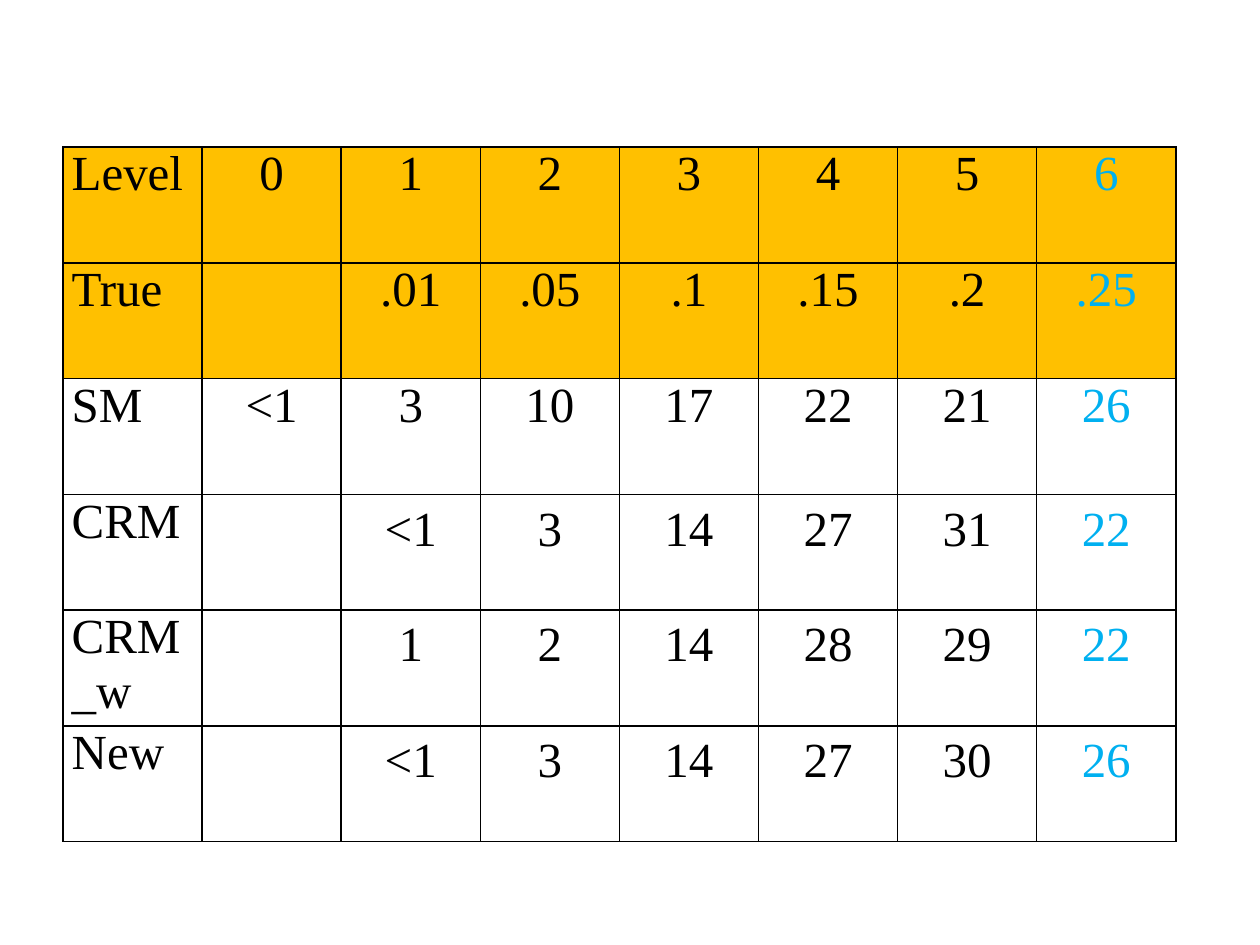
from lxml import etree
from pptx import Presentation
from pptx.dml.color import RGBColor
from pptx.enum.text import PP_ALIGN
from pptx.oxml.ns import qn
from pptx.util import Pt

CENTER, LEFT = PP_ALIGN.CENTER, PP_ALIGN.LEFT
BLANK_LAYOUT = 6
COLORS = {"text": "000000", "border": "000000", "header": "FFC000", "highlight": "00B0F0"}
FONT = "Times New Roman"
HEADER_ROWS = 2
FIRST_LOOSE_ROW = 3
ROWS = [
    ["Level", "0", "1", "2", "3", "4", "5", "6"],
    ["True", "", ".01", ".05", ".1", ".15", ".2", ".25"],
    ["SM", "<1", "3", "10", "17", "22", "21", "26"],
    ["CRM", "", "<1", "3", "14", "27", "31", "22"],
    ["CRM_w", "", "1", "2", "14", "28", "29", "22"],
    ["New", "", "<1", "3", "14", "27", "30", "26"],
]


def add_borders(cell):
    """Draw a one-point line on each side of the cell."""
    properties = cell._tc.get_or_add_tcPr()
    for index, side in enumerate(("a:lnL", "a:lnR", "a:lnT", "a:lnB")):
        line = etree.Element(qn(side), w=str(Pt(1)))
        fill = etree.SubElement(line, qn("a:solidFill"))
        etree.SubElement(fill, qn("a:srgbClr"), val=COLORS["border"])
        properties.insert(index, line)


def format_cell(cell, text, row, column):
    """Fill one cell and style it by its place in the table."""
    cell.margin_left = cell.margin_right = Pt(5)
    cell.margin_top = cell.margin_bottom = Pt(0)
    if row < HEADER_ROWS:
        cell.fill.solid()
        cell.fill.fore_color.rgb = RGBColor.from_string(COLORS["header"])
    else:
        cell.fill.background()
    add_borders(cell)

    cell.text = text
    paragraph = cell.text_frame.paragraphs[0]
    paragraph.alignment = CENTER if column else LEFT
    if column and row >= FIRST_LOOSE_ROW:
        paragraph.line_spacing = 1.15
    paragraph.font.name = FONT
    paragraph.font.size = Pt(28)
    color = "highlight" if column == len(ROWS[0]) - 1 else "text"
    paragraph.font.color.rgb = RGBColor.from_string(COLORS[color])


def add_level_table(slide, left, top, width, height):
    """Place the table of results by level in the given box."""
    frame = slide.shapes.add_table(len(ROWS), len(ROWS[0]), left, top, width, height)
    table = frame.table
    table.first_row = table.horz_banding = False
    for row, texts in enumerate(ROWS):
        for column, text in enumerate(texts):
            format_cell(table.cell(row, column), text, row, column)


def main():
    """Build the slide and save it."""
    presentation = Presentation()
    presentation.slide_width, presentation.slide_height = Pt(720), Pt(540)
    slide = presentation.slides.add_slide(presentation.slide_layouts[BLANK_LAYOUT])
    add_level_table(slide, Pt(36), Pt(84), Pt(636), Pt(397))
    presentation.save("out.pptx")


if __name__ == "__main__":
    main()
